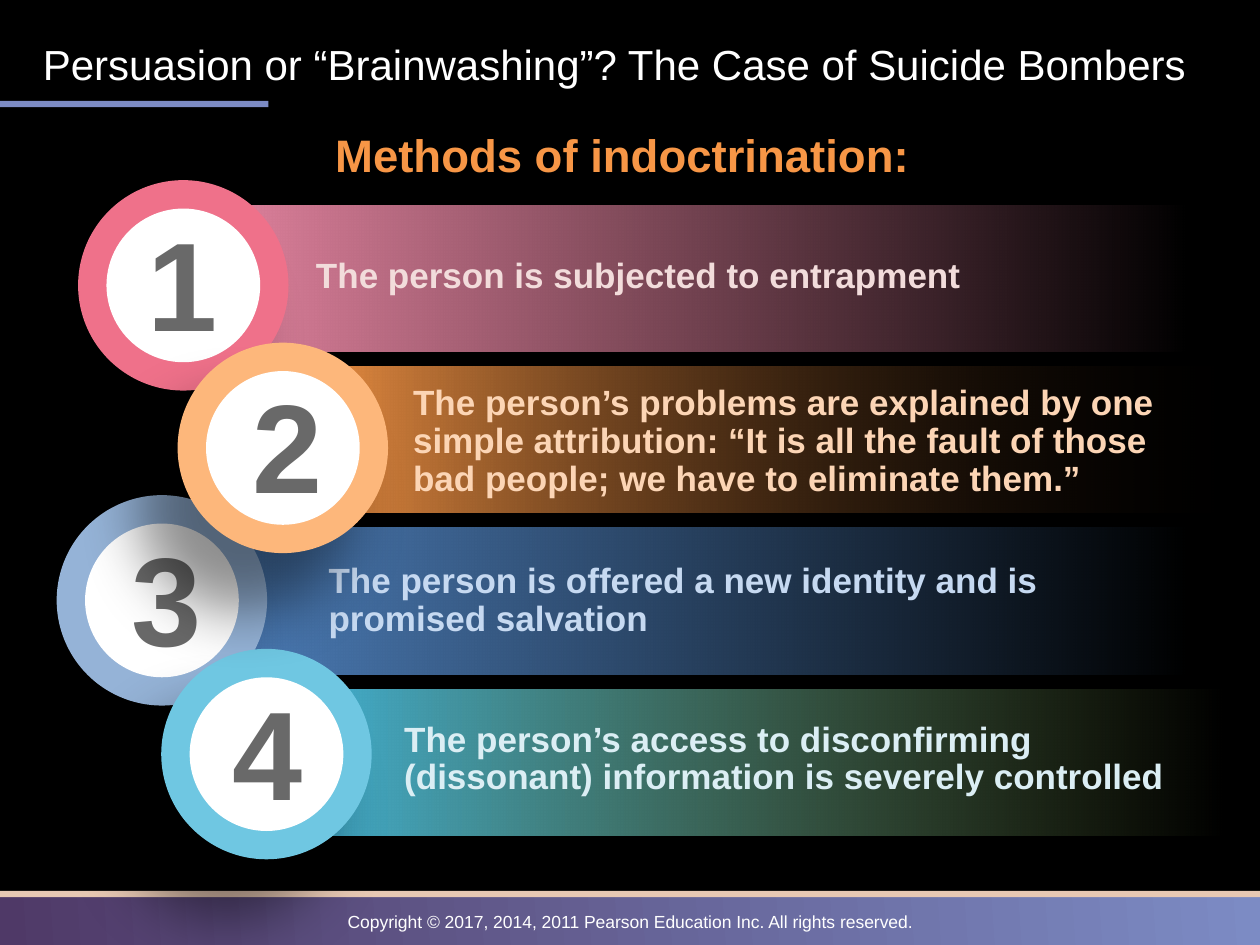
from lxml import etree
from pptx import Presentation
from pptx.dml.color import RGBColor
from pptx.enum.shapes import MSO_SHAPE
from pptx.enum.text import MSO_ANCHOR, PP_ALIGN
from pptx.oxml.ns import qn
from pptx.util import Inches, Pt

RECT, OVAL = MSO_SHAPE.RECTANGLE, MSO_SHAPE.OVAL
LEFT, CENTER = PP_ALIGN.LEFT, PP_ALIGN.CENTER
MIDDLE = MSO_ANCHOR.MIDDLE

TITLE = "Persuasion or “Brainwashing”? The Case of Suicide Bombers"
HEAD = "Methods of indoctrination:"
LEGAL = "Copyright © 2017, 2014, 2011 Pearson Education Inc. All rights reserved."
BARS = [
    ("The person is subjected to entrapment",
     "F2DCDB", "E585A1", "E585A1", 1.58, 7.87, (2.41, 2, 5.77, 0.41)),
    ("The person’s problems are explained by one simple attribution: "
     "“It is all the fault of those bad people; we have to eliminate them.”",
     "FCD5B5", "F79646", "000000", 2.27, 7.87, (3.18, 3.01, 6.25, 1.02)),
    ("The person is offered a new identity and is promised salvation",
     "C6D9F1", "4F81BD", "4F81BD", 1.58, 7.87, (2.51, 4.42, 6.9, 0.71)),
    ("The person’s access to disconfirming (dissonant) information "
     "is severely controlled",
     "DBEEF4", "42B3D9", "9BBB59", 2.27, 7.47, (3.11, 5.68, 6.47, 0.71)),
]
BADGES = [
    ("1", "EF718A", 0.62, 1.43, 0.91),
    ("3", "95B3D7", 0.45, 3.93, 0.78),
    ("4", "6FC7E2", 1.28, 5.15, 1.58),
    ("2", "FDB77B", 1.41, 2.72, 1.74),
]
TOP, STEP, BAR = 1.63, 1.28, 1.16
RING, DISC, NUM = 1.67, 1.22, 1.08


def paint(color, code):
    """Set a colour from a hex string."""
    color.rgb = RGBColor.from_string(code)


def fade(node, share):
    """Give a colour element an opacity in percent."""
    etree.SubElement(node, qn("a:alpha"), val=str(share * 1000))


def shape(kind, box, *codes, angle=0):
    """Add a shape with a solid fill or a two-colour gradient."""
    item = slide.shapes.add_shape(kind, *map(Inches, box))
    item.shadow.inherit = False
    item.line.fill.background()
    if len(codes) == 1:
        item.fill.solid()
        paint(item.fill.fore_color, codes[0])
    else:
        item.fill.gradient()
        item.fill.gradient_angle = angle
        for pos, (stop, code) in enumerate(zip(item.fill.gradient_stops, codes)):
            stop.position = pos
            paint(stop.color, code)
    return item


def shade(item, share, blur, dist, angle):
    """Cast a black outer shadow."""
    node = etree.SubElement(
        item._element.spPr.find(qn("a:effectLst")), qn("a:outerShdw"),
        blurRad=str(Pt(blur)), dist=str(Pt(dist)), dir=str(angle * 60000),
        algn="ctr", rotWithShape="0")
    fade(etree.SubElement(node, qn("a:srgbClr"), val="000000"), share)


def write(item, words, size, code, bold=False, align=LEFT, gap=1.0):
    """Fill a shape with one formatted paragraph."""
    frame = item.text_frame
    frame.word_wrap = True
    frame.text = words
    para = frame.paragraphs[0]
    para.alignment, para.line_spacing = align, gap
    font = para.runs[0].font
    font.name, font.size, font.bold = "Arial", Pt(size), bold
    paint(font.color, code)
    return para


def label(box, *args, **style):
    """Add a text box with one paragraph."""
    return write(slide.shapes.add_textbox(*map(Inches, box)), *args, **style)


deck = Presentation()
deck.slide_width, deck.slide_height = Inches(10), Inches(7.5)
slide = deck.slides.add_slide(deck.slide_layouts[5])
back = slide.background.fill
back.solid()
paint(back.fore_color, "000000")

shape(RECT, (0, 7.08, 10, 0.45), "4F3967", "7C8BC4", angle=4)
shape(RECT, (0, 7.07, 10.05, 0.05), "E7C8B3")
label((0, 7.18, 10, 0.27), LEGAL, 10, "FFFFFF", align=CENTER)
shade(shape(RECT, (-0.19, 0.8, 2.32, 0.05), "7C8BC4"), 35, 3.1, 1.8, 90)

title = slide.shapes.title
title.left, title.top, title.width, title.height = map(
    Inches, (0.24, 0.21, 9.63, 0.59))
write(title, TITLE, 24, "FFFFFF")
title.text_frame.vertical_anchor = MIDDLE

for row, (words, ink, start, end, left, wide, box) in enumerate(BARS):
    bar = shape(RECT, (left, TOP + row * STEP, wide, BAR), start, end)
    fade(bar._element.spPr.findall(".//" + qn("a:srgbClr"))[-1], 0)
    label(box, words, 20, ink, bold=True, gap=0.9)

label((2.48, 1.04, 4.92, 0.46), HEAD, 26, "F79646", bold=True,
      align=CENTER, gap=0.8)

inset = (RING - DISC) / 2
for digit, code, left, top, num in BADGES:
    shade(shape(OVAL, (left, top, RING, RING), code), 43, 35.5, 41, 124)
    shape(OVAL, (left + inset, top + inset, DISC, DISC), "FFFFFF")
    para = label((num, top + 0.15, NUM, 1.31), digit, 72, "000000",
                 bold=True, align=CENTER)
    fade(para._p.find(".//" + qn("a:srgbClr")), 59)

deck.save("out.pptx")
